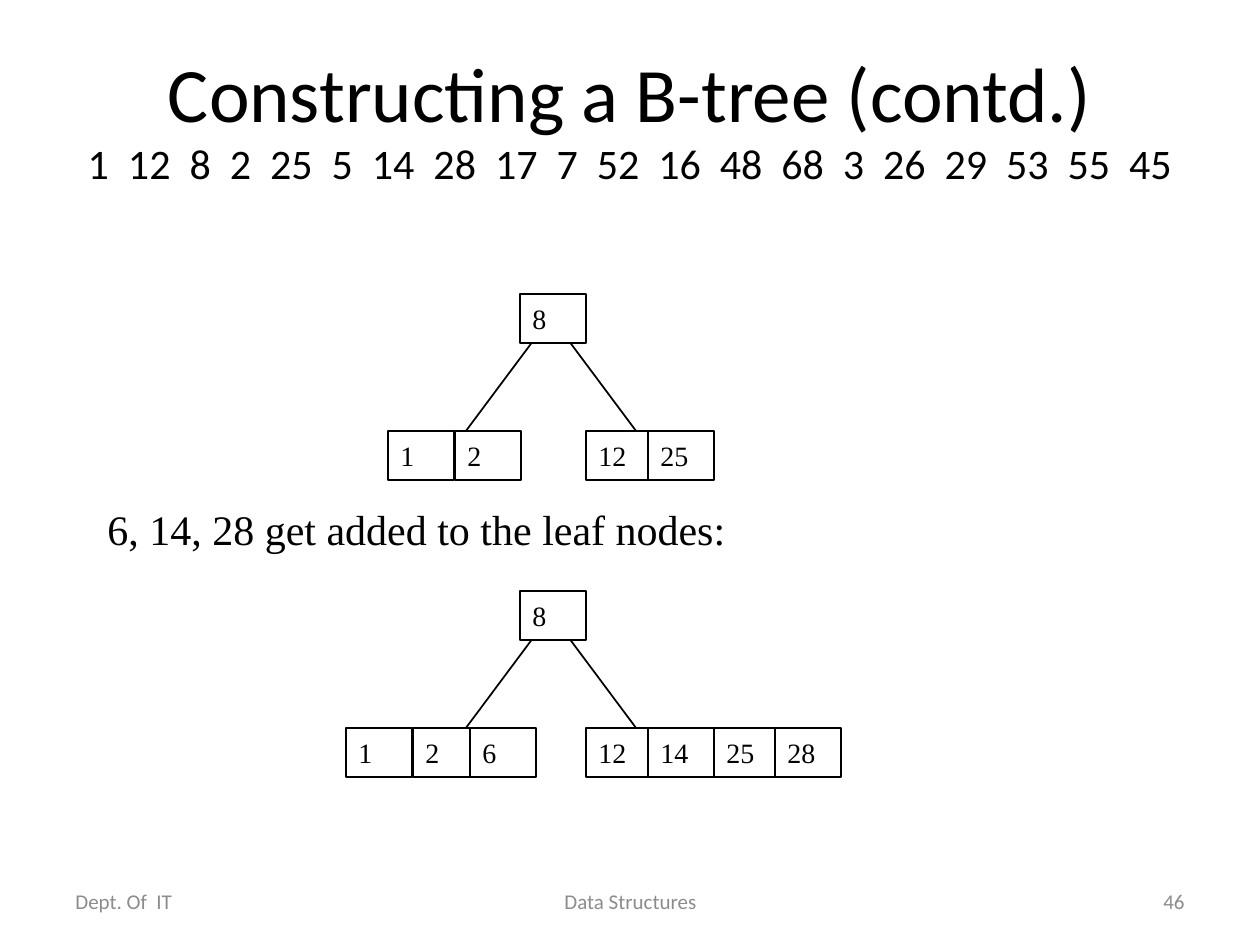
"""Build the slide that shows keys being added to the leaves of a B-tree."""
import pptx
import pptx.dml.color
import pptx.enum.shapes
import pptx.enum.text
import pptx.oxml
import pptx.oxml.ns
import pptx.util

HEADING = "Constructing a B-tree (contd.)"
KEYS = "1  12  8  2  25  5  14  28  17  7  52  16  48  68  3  26  29  53  55  45"
STEP = "6, 14, 28 get added to the leaf nodes:"
FOOTERS = [
    ("Dept. Of  IT", 63, 294, "LEFT"),
    ("Data Structures", 431, 399, "CENTER"),
    ("46", 903, 294, "RIGHT"),
]
TREES = [
    {"top": 294, "leaves": [("1", 388), ("2", 455), ("12", 586), ("25", 648)]},
    {"top": 591, "leaves": [("1", 346), ("2", 413), ("6", 470), ("12", 586),
                            ("14", 648), ("25", 714), ("28", 775)]},
]
ROOT, ROOT_LEFT = "8", 520
KEY_WIDTH, KEY_HEIGHT, LEAF_DROP = 66, 49, 137
BRANCHES = [(545, 451), (557, 651)]
BRANCH_START, BRANCH_END = 31, 157
COLORS = {"ink": "000000", "paper": "FFFFFF", "footer": "8C8C8C"}
SANS, SERIF = "Calibri", "Times New Roman"
EMU_PER_PX = 914400 / 126


def px(*lengths):
    return [pptx.util.Emu(round(length * EMU_PER_PX)) for length in lengths]


def rgb(name):
    return pptx.dml.color.RGBColor.from_string(COLORS[name])


def style(run, size, font, color="ink"):
    run.font.size = pptx.util.Pt(size)
    run.font.name = font
    run.font.color.rgb = rgb(color)


def write(frame, text, size, font, color="ink", align="LEFT", anchor="MIDDLE"):
    frame.text = text
    frame.word_wrap = True
    frame.vertical_anchor = getattr(pptx.enum.text.MSO_ANCHOR, anchor)
    line = frame.paragraphs[0]
    line.alignment = getattr(pptx.enum.text.PP_ALIGN, align)
    style(line.runs[0], size, font, color)


def add_key(slide, key, left, top):
    box = slide.shapes.add_shape(pptx.enum.shapes.MSO_SHAPE.RECTANGLE,
                                 *px(left, top, KEY_WIDTH, KEY_HEIGHT))
    box.shadow.inherit = False
    box.fill.solid()
    box.fill.fore_color.rgb = rgb("paper")
    box.line.color.rgb = rgb("ink")
    box.line.width = pptx.util.Pt(0.75)
    write(box.text_frame, key, 16, SERIF)


def add_branch(slide, start, end, top):
    branch = slide.shapes.add_connector(
        pptx.enum.shapes.MSO_CONNECTOR.STRAIGHT,
        *px(start, top + BRANCH_START, end, top + BRANCH_END))
    branch.line.color.rgb = rgb("ink")
    branch.line.width = pptx.util.Pt(1)
    properties = branch._element.spPr
    properties.append(pptx.oxml.parse_xml(
        f"<a:effectLst {pptx.oxml.ns.nsdecls('a')}/>"))


def add_tree(slide, top, leaves):
    for start, end in BRANCHES:
        add_branch(slide, start, end, top)
    add_key(slide, ROOT, ROOT_LEFT, top)
    for key, left in leaves:
        add_key(slide, key, left, top + LEAF_DROP)


def main():
    deck = pptx.Presentation()
    deck.slide_width, deck.slide_height = px(1260, 945)
    slide = deck.slides.add_slide(deck.slide_layouts[5])

    title = slide.shapes.title
    title.left, title.top, title.width, title.height = px(63, 38, 1134, 157)
    write(title.text_frame, HEADING + "\v" + KEYS, 44, SANS, align="CENTER")
    title.text_frame.auto_size = pptx.enum.text.MSO_AUTO_SIZE.NONE
    style(title.text_frame.paragraphs[0].runs[1], 24, SANS)

    for text, left, width, align in FOOTERS:
        footer = slide.shapes.add_textbox(*px(left, 876, width, 50))
        write(footer.text_frame, text, 12, SANS, "footer", align)

    step = slide.shapes.add_textbox(*px(95, 497, 1081, 60))
    write(step.text_frame, STEP, 24, SERIF, anchor="TOP")

    for tree in TREES:
        add_tree(slide, **tree)

    deck.save("out.pptx")


if __name__ == "__main__":
    main()
